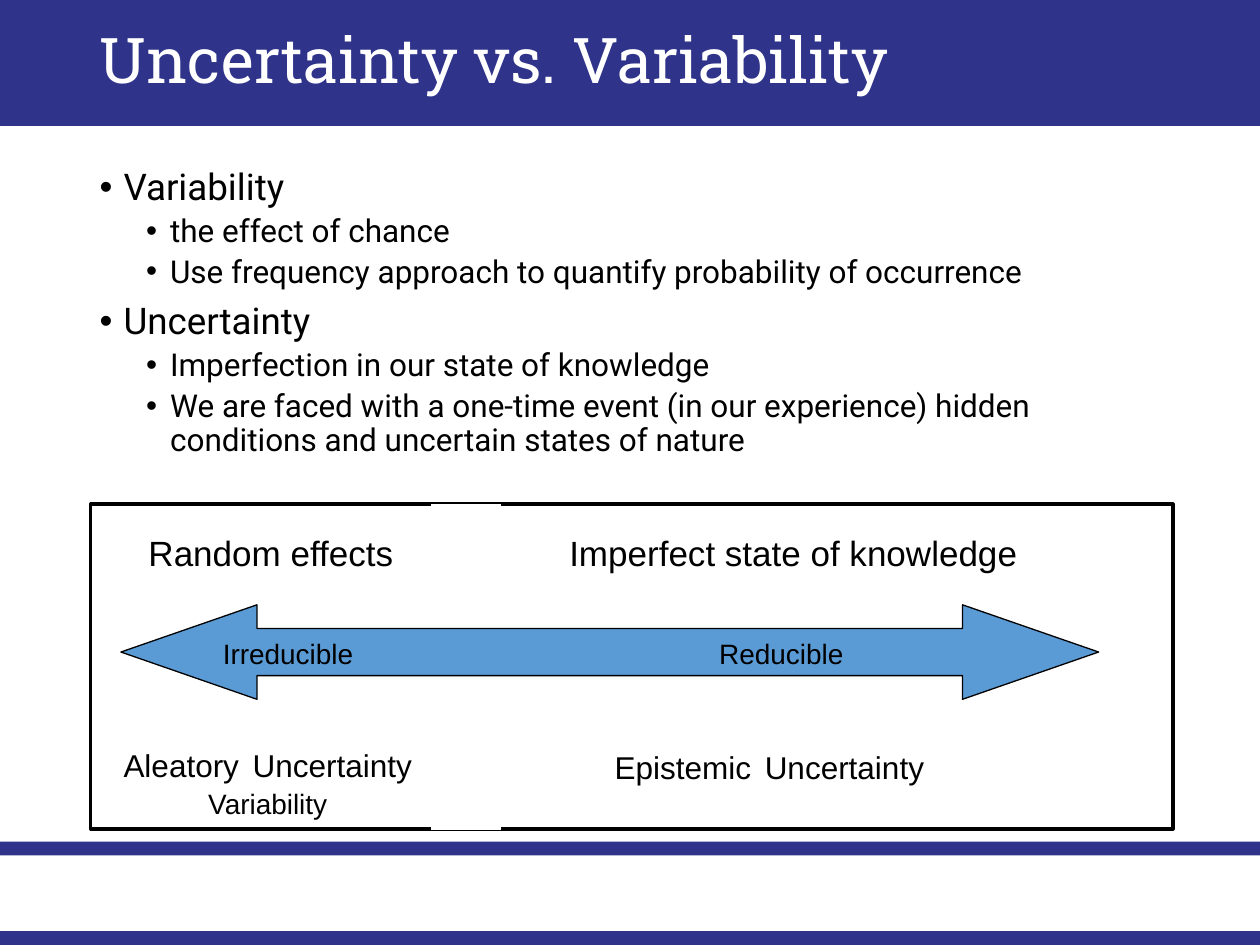
from dataclasses import dataclass

from lxml import etree
from pptx import Presentation
from pptx.dml.color import RGBColor
from pptx.enum.shapes import MSO_CONNECTOR, MSO_SHAPE
from pptx.enum.text import MSO_ANCHOR, MSO_AUTO_SIZE, PP_ALIGN
from pptx.oxml.ns import qn
from pptx.util import Emu, Pt

RECTANGLE = MSO_SHAPE.RECTANGLE
DOUBLE_ARROW = MSO_SHAPE.LEFT_RIGHT_ARROW
STRAIGHT = MSO_CONNECTOR.STRAIGHT
LEFT, CENTER = PP_ALIGN.LEFT, PP_ALIGN.CENTER
TOP, MIDDLE = MSO_ANCHOR.TOP, MSO_ANCHOR.MIDDLE
NO_FIT = MSO_AUTO_SIZE.NONE

PX = 9144  # 100 px to the inch


@dataclass(frozen=True)
class Theme:
    navy: str = "2F338A"
    blue: str = "5B9BD5"
    white: str = "FFFFFF"
    black: str = "000000"
    title_font: str = "Roboto Slab"
    body_font: str = "Roboto"
    label_font: str = "Arial"
    title_size: int = 36
    bullet_sizes: tuple = (21, 18)
    bullet_gaps: tuple = (7.5, 3.8)
    bullet_indents: tuple = (19, 56)
    hanging: int = 19
    heading_size: int = 20
    label_size: int = 18
    small_size: int = 16
    wide_space: int = 28


def px(*lengths):
    return [Emu(length * PX) for length in lengths]


class SlideBuilder:
    def __init__(self, page, theme):
        self.page = page
        self.theme = theme
        self.group = None

    def start_group(self):
        self.group = self.page.shapes.add_group_shape()

    def span(self, para, text, font, size, color):
        span = para.add_run()
        span.text = text
        span.font.name = font
        span.font.size = Pt(size)
        span.font.color.rgb = RGBColor.from_string(color)

    def place(self, holder, area, anchor):
        holder.left, holder.top, holder.width, holder.height = px(*area)
        frame = holder.text_frame
        frame.word_wrap = True
        frame.auto_size = NO_FIT
        frame.vertical_anchor = anchor
        return frame

    def title(self, text, area):
        theme = self.theme
        para = self.place(self.page.shapes.title, area, MIDDLE).paragraphs[0]
        para.alignment = LEFT
        para.line_spacing = 0.9
        self.span(para, text, theme.title_font, theme.title_size, theme.white)

    def bullets(self, items, area):
        theme = self.theme
        frame = self.place(self.page.placeholders[1], area, TOP)
        for index, (level, text) in enumerate(items):
            para = frame.add_paragraph() if index else frame.paragraphs[0]
            para.level = level
            para.line_spacing = 0.9
            para.space_before = Pt(theme.bullet_gaps[level] if index else 0)
            properties = para._p.get_or_add_pPr()
            properties.set("marL", str(theme.bullet_indents[level] * PX))
            properties.set("indent", str(-theme.hanging * PX))
            etree.SubElement(properties, qn("a:buFont")).set("typeface", "Arial")
            etree.SubElement(properties, qn("a:buChar")).set("char", "•")
            self.span(para, text, theme.body_font, theme.bullet_sizes[level], theme.black)

    def band(self, area, color):
        band = self.page.shapes.add_shape(RECTANGLE, *px(*area))
        band.shadow.inherit = False
        band.fill.solid()
        band.fill.fore_color.rgb = RGBColor.from_string(color)
        band.line.fill.background()
        # Bands lie behind the placeholders
        band.element.getparent().insert(2, band.element)

    def outline(self, kind, area, weight, fill=None):
        shape = self.group.shapes.add_shape(kind, *px(*area))
        shape.shadow.inherit = False
        if fill:
            shape.fill.solid()
            shape.fill.fore_color.rgb = RGBColor.from_string(fill)
        else:
            shape.fill.background()
        shape.line.color.rgb = RGBColor.from_string(self.theme.black)
        shape.line.width = Pt(weight)
        return shape

    def line(self, start, end, color, weight):
        line = self.group.shapes.add_connector(STRAIGHT, *px(*start, *end))
        line.line.color.rgb = RGBColor.from_string(color)
        line.line.width = Pt(weight)
        etree.SubElement(line.element.spPr, qn("a:effectLst"))

    def label(self, lines, area, alignment=LEFT):
        box = self.group.shapes.add_textbox(*px(*area))
        frame = box.text_frame
        frame.word_wrap = True
        for index, spans in enumerate(lines):
            para = frame.add_paragraph() if index else frame.paragraphs[0]
            para.alignment = alignment
            for text, size in spans:
                self.span(para, text, self.theme.label_font, size, self.theme.black)


def main():
    deck = Presentation()
    deck.slide_width, deck.slide_height = px(1000, 750)
    theme = Theme()
    page = deck.slides.add_slide(deck.slide_layouts[1])
    slide = SlideBuilder(page, theme)

    # Header and footer bands
    for top, height, color in (
        (0, 100, theme.navy),
        (668, 11, theme.navy),
        (739, 11, theme.navy),
        (679, 60, theme.white),
    ):
        slide.band((0, top, 1000, height), color)

    # Title and definitions
    slide.title("Uncertainty vs. Variability", (69, 0, 862, 100))
    slide.bullets(
        [
            (0, "Variability"),
            (1, "the effect of chance"),
            (1, "Use frequency approach to quantify probability of occurrence"),
            (0, "Uncertainty"),
            (1, "Imperfection in our state of knowledge"),
            (1, "We are faced with a one-time event (in our experience) hidden "
                "conditions and uncertain states of nature"),
        ],
        (69, 129, 862, 261),
    )

    # Two panels with an open gap where they meet
    slide.start_group()
    left, divide, right, top, height = 72, 370, 931, 400, 258
    slide.outline(RECTANGLE, (left, top, divide - left, height), 1.75)
    slide.outline(RECTANGLE, (divide, top, right - divide, height), 1.75)
    slide.line((divide, top), (divide, top + height + 1), theme.white, 40)

    # Range from irreducible to reducible
    arrow = slide.outline(DOUBLE_ARROW, (96, 480, 776, 75), 0.75, theme.blue)
    arrow.adjustments[0] = 0.5
    arrow.adjustments[1] = 1.44

    # One-line labels
    for text, size, area in (
        ("Random effects", theme.heading_size, (108, 417, 418, 44)),
        ("Imperfect state of knowledge", theme.heading_size, (442, 417, 430, 44)),
        ("Irreducible", theme.small_size, (167, 500, 167, 37)),
        ("Reducible", theme.small_size, (561, 500, 155, 37)),
    ):
        slide.label([[(text, size)]], area)

    # Kinds of uncertainty
    aleatory, epistemic = (
        [(kind, theme.label_size), (" ", theme.wide_space), ("Uncertainty", theme.label_size)]
        for kind in ("Aleatory", "Epistemic")
    )
    variability = [("Variability", theme.small_size)]
    slide.label([aleatory, variability], (69, 573, 287, 84), CENTER)
    slide.label([epistemic], (478, 575, 418, 57))

    deck.save("out.pptx")


if __name__ == "__main__":
    main()
